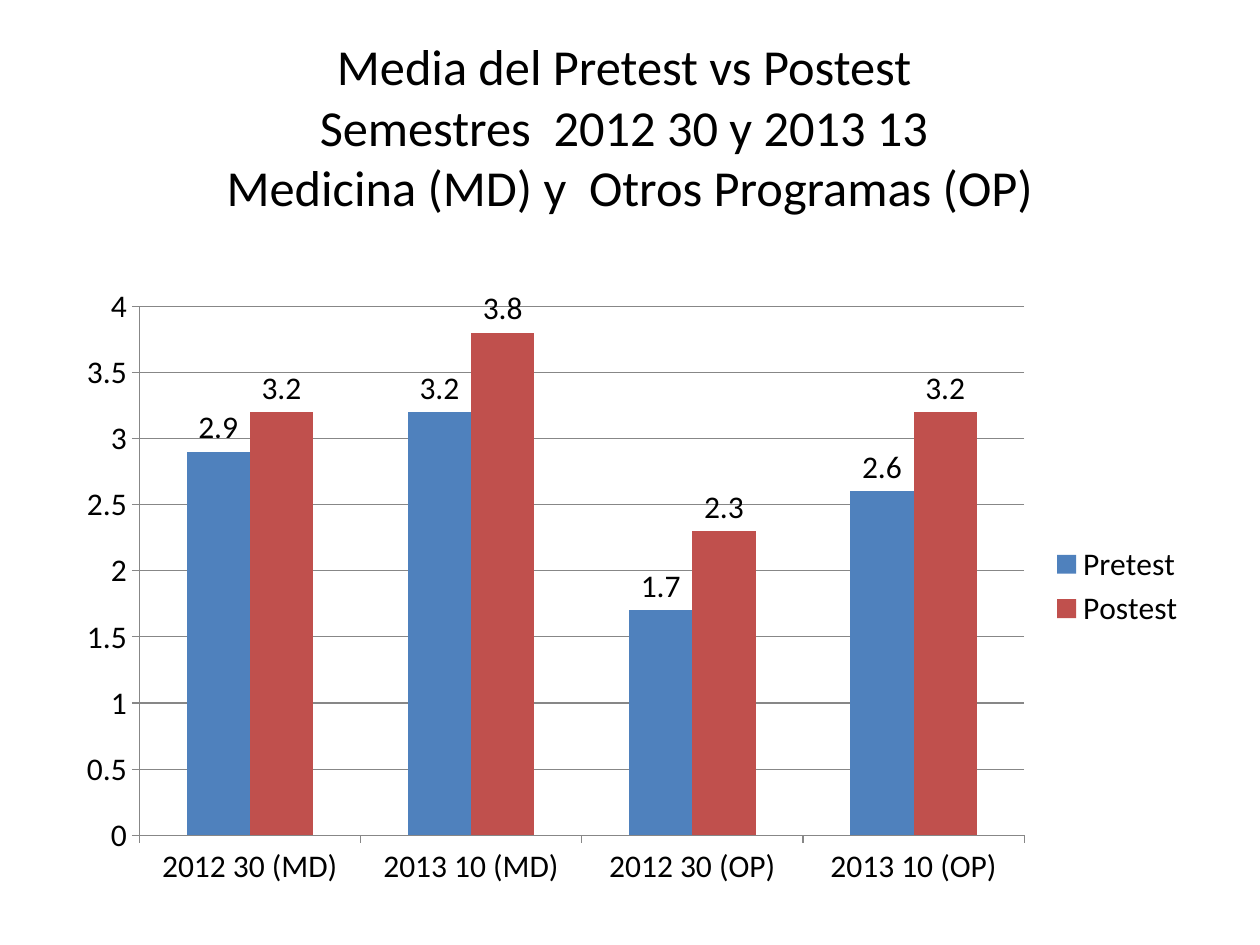
from pptx import Presentation
from pptx.chart.data import CategoryChartData
from pptx.dml.color import RGBColor
from pptx.enum.chart import XL_CHART_TYPE, XL_LABEL_POSITION, XL_LEGEND_POSITION, XL_TICK_MARK
from pptx.enum.text import MSO_ANCHOR, MSO_AUTO_SIZE, PP_ALIGN
from pptx.oxml.ns import qn
from pptx.util import Inches, Pt

FONT = "Calibri"
BLACK, GRID = "000000", "878787"
TITLE = [
    "Media del Pretest vs Postest ",
    "Semestres  2012 30 y 2013 13 ",
    "Medicina (MD) y  Otros Programas (OP)",
]
CATEGORIES = ["2012 30 (MD)", "2013 10 (MD)", "2012 30 (OP)", "2013 10 (OP)"]
SERIES = [
    ("Pretest", [2.9, 3.2, 1.7, 2.6], "4F81BD"),
    ("Postest", [3.2, 3.8, 2.3, 3.2], "C0504D"),
    ("Series 3", [], "9BBB59"),
]


def rgb(value):
    return RGBColor.from_string(value)


def set_font(font, size):
    font.name = FONT
    font.size = Pt(size)
    font.bold = False
    font.color.rgb = rgb(BLACK)


def set_line(line):
    line.color.rgb = rgb(GRID)
    line.width = Pt(0.75)


def add_title(s):
    sp = s.shapes.title
    sp.left, sp.top, sp.width, sp.height = map(Inches, (0.5, 0.3, 9, 1.4))
    tf = sp.text_frame
    tf.word_wrap = True
    tf.auto_size = MSO_AUTO_SIZE.NONE
    tf.vertical_anchor = MSO_ANCHOR.MIDDLE
    p = tf.paragraphs[0]
    p.text = "\v".join(TITLE)
    p.alignment = PP_ALIGN.CENTER
    set_font(p.font, 28.8)


def add_score_chart(s):
    data = CategoryChartData()
    data.categories = CATEGORIES
    for name, values, _ in SERIES:
        data.add_series(name, values)
    chart = s.shapes.add_chart(
        XL_CHART_TYPE.COLUMN_CLUSTERED,
        Inches(0.51), Inches(2.18), Inches(9), Inches(4.95), data,
    ).chart
    set_font(chart.font, 18)
    chart.has_title = False
    chart.has_legend = True
    chart.legend.position = XL_LEGEND_POSITION.RIGHT
    chart.legend.include_in_layout = False

    for axis in (chart.category_axis, chart.value_axis):
        axis.major_tick_mark = XL_TICK_MARK.OUTSIDE
        axis.minor_tick_mark = XL_TICK_MARK.NONE
        set_line(axis.format.line)
    axis = chart.value_axis
    axis.minimum_scale, axis.maximum_scale, axis.major_unit = 0, 4, 0.5
    axis.has_major_gridlines = True
    set_line(axis.major_gridlines.format.line)

    plot = chart.plots[0]
    plot.gap_width = 150
    plot.vary_by_categories = False
    for series, (_, values, color) in zip(plot.series, SERIES):
        series.format.fill.solid()
        series.format.fill.fore_color.rgb = rgb(color)
        if not values:
            # A series without a value list takes no room among the columns
            ser = series._element
            ser.remove(ser.find(qn("c:val")))
            continue
        labels = series.data_labels
        labels.show_value = True
        labels.position = XL_LABEL_POSITION.OUTSIDE_END
        set_font(labels.font, 18)


def main():
    prs = Presentation()
    prs.slide_width, prs.slide_height = Inches(10), Inches(7.5)
    s = prs.slides.add_slide(prs.slide_layouts[5])
    add_title(s)
    add_score_chart(s)
    prs.save("out.pptx")


if __name__ == "__main__":
    main()
